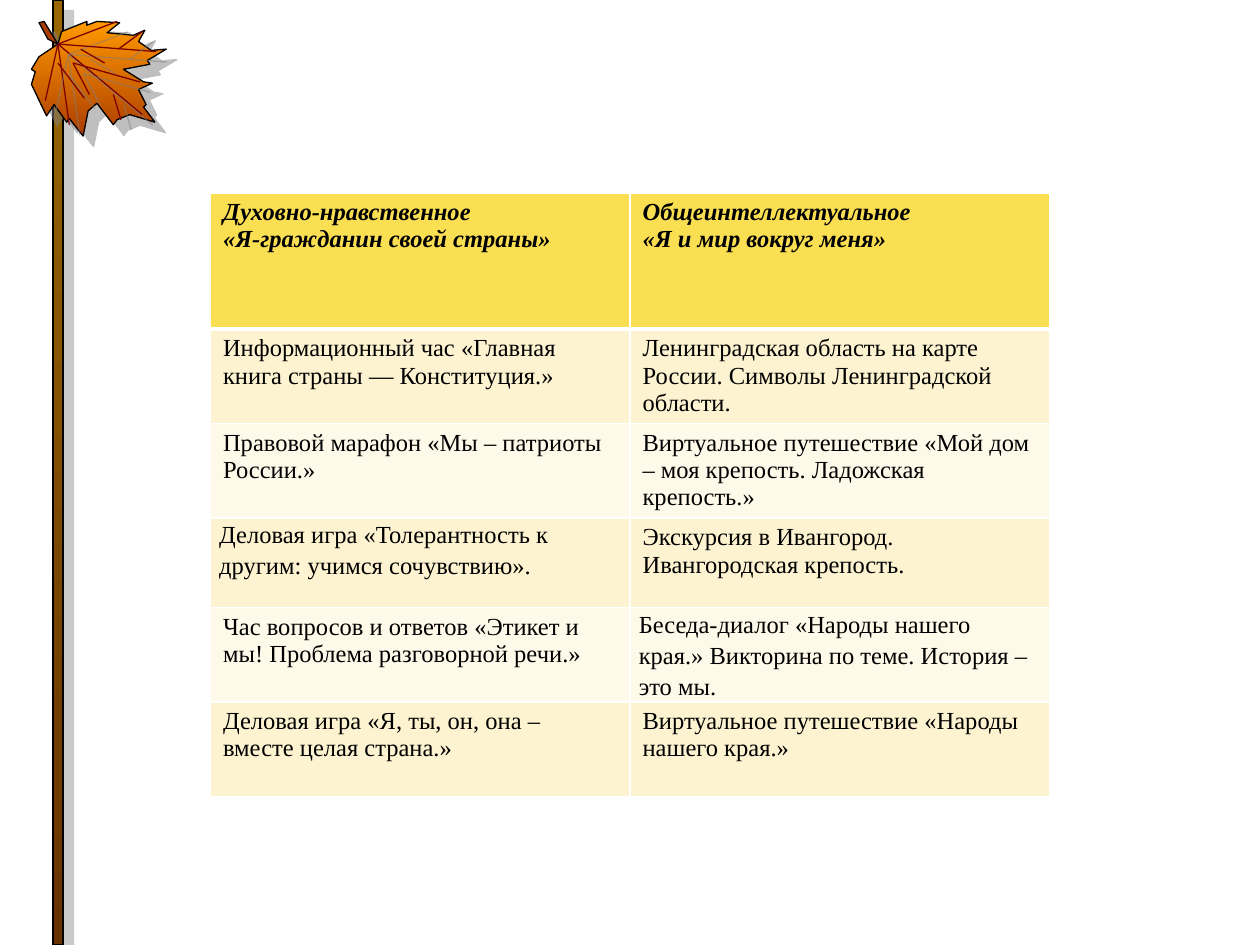
"""Build a slide with a two-column table of activities and an autumn leaf on a pole."""
from lxml import etree
from pptx import Presentation
from pptx.dml.color import RGBColor
from pptx.enum.shapes import MSO_SHAPE
from pptx.oxml.ns import qn
from pptx.util import Inches, Pt

RECT = MSO_SHAPE.RECTANGLE
FONT = "Times New Roman"
HEADER, BAND_DARK, BAND_LIGHT = "FBDF53", "FDF3D1", "FEF9E9"
BLACK, WHITE, VEIN = "000000", "FFFFFF", "7F0000"

ROWS = [
    ("Духовно-нравственное\n«Я-гражданин своей страны»",
     "Общеинтеллектуальное\n«Я и мир вокруг меня»"),
    ("Информационный час «Главная книга страны — Конституция.»",
     "Ленинградская область на карте России. Символы Ленинградской области."),
    ("Правовой марафон «Мы – патриоты России.»",
     "Виртуальное путешествие «Мой дом – моя крепость. Ладожская крепость.»"),
    ("Деловая игра «Толерантность к другим: учимся сочувствию».",
     "Экскурсия в Ивангород. Ивангородская крепость."),
    ("Час вопросов и ответов «Этикет и мы! Проблема разговорной речи.»",
     "Беседа-диалог «Народы нашего края.» Викторина по теме. История – это мы."),
    ("Деловая игра «Я, ты, он, она – вместе целая страна.»",
     "Виртуальное путешествие «Народы нашего края.»"),
]
ROW_HEIGHTS = [1.08, 0.75, 0.75, 0.71, 0.75, 0.75]
LOOSE_CELLS = {(3, 0), (4, 1)}

BASE = (46, 35)
STEM = [BASE, (35, 17), (31, 18), (38, 31)]
LEAF = [
    BASE, (31, 45), (25, 55), (28, 57), (25, 67), (37, 92), (43, 83), (53, 97), (55, 94),
    (66, 108), (70, 88), (77, 82), (90, 99), (93, 95), (103, 91), (123, 97), (114, 85),
    (116, 83), (110, 71), (121, 66), (114, 65), (98, 55), (119, 51), (117, 48), (132, 39),
    (120, 40), (110, 33), (115, 24), (106, 28), (85, 26), (95, 18), (77, 17), (69, 20),
    (69, 17), (49, 25),
]
VEIN_TIPS = [(113, 91), (55, 99), (36, 80), (93, 17), (124, 41)]
SIDE_VEINS = [
    ((58, 50), (111, 65)), ((58, 50), (71, 75)), ((46, 50), (67, 78)),
    ((90, 75), (96, 95)), ((64, 39), (83, 50)), ((94, 39), (113, 25)),
]


def rgb(value):
    return RGBColor.from_string(value)


def add_color(parent, value):
    return etree.SubElement(parent, qn("a:srgbClr"), val=value)


def style(sp, fills, line, width, shadow):
    if len(fills) == 2:
        sp.fill.gradient()
        sp.fill.gradient_angle = 270
        for stop, value in zip(sp.fill.gradient_stops, fills):
            stop.color.rgb = rgb(value)
    elif fills:
        sp.fill.solid()
        sp.fill.fore_color.rgb = rgb(fills[0])
    else:
        sp.fill.background()
    sp.line.color.rgb = rgb(line)
    sp.line.width = Pt(width)
    sp.shadow.inherit = False
    effects = sp._element.spPr.find(qn("a:effectLst"))
    outer = etree.SubElement(effects, qn("a:outerShdw"), dist=str(Pt(8.5)),
                             dir="2700000", algn="ctr", rotWithShape="0")
    etree.SubElement(add_color(outer, shadow), qn("a:alpha"), val="50000")


def add_outline(s, points, fills, line, close):
    builder = s.shapes.build_freeform(*points[0], scale=Inches(0.01))
    builder.add_line_segments(points[1:], close=close)
    style(builder.convert_to_shape(), fills, line, 0, "808080")


def set_borders(cell, widths):
    tc_pr = cell._tc.get_or_add_tcPr()
    for side, width in zip("LRTB", widths):
        ln = etree.SubElement(tc_pr, qn(f"a:ln{side}"), w=str(Pt(width)))
        add_color(etree.SubElement(ln, qn("a:solidFill")), WHITE)


def fill_cell(cell, text, row, loose):
    set_borders(cell, (1, 1, 3 if row == 1 else 1, 3 if row == 0 else 1))
    cell.fill.solid()
    cell.fill.fore_color.rgb = rgb(HEADER if row == 0 else BAND_DARK if row % 2 else BAND_LIGHT)
    if loose:
        cell.margin_left = cell.margin_right = Inches(0.07)
        cell.margin_top = cell.margin_bottom = 0
    tf = cell.text_frame
    tf.text = text
    for p in tf.paragraphs:
        p.font.name, p.font.size = FONT, Pt(14)
        p.font.bold = p.font.italic = row == 0
        p.font.color.rgb = rgb(BLACK)
        if loose:
            p.line_spacing = 1.15


def add_activity_table(s):
    table = s.shapes.add_table(len(ROWS), 2, Inches(1.67), Inches(1.53),
                               Inches(6.66), Inches(sum(ROW_HEIGHTS))).table
    for i, (texts, height) in enumerate(zip(ROWS, ROW_HEIGHTS)):
        table.rows[i].height = Inches(height)
        for j, text in enumerate(texts):
            fill_cell(table.cell(i, j), text, i, (i, j) in LOOSE_CELLS)


def main():
    prs = Presentation()
    prs.slide_width, prs.slide_height = Inches(10), Inches(7.5)
    s = prs.slides.add_slide(prs.slide_layouts[6])
    pole = s.shapes.add_shape(RECT, Inches(0.42), 0, Inches(0.08), Inches(7.5))
    style(pole, ("996600", "663300"), BLACK, 0.75, "969696")
    add_outline(s, STEM, ("AC3D00",), BLACK, True)
    add_outline(s, LEAF, ("FF9900", "AC3D00"), BLACK, True)
    for vein in [(BASE, tip) for tip in VEIN_TIPS] + SIDE_VEINS:
        add_outline(s, vein, (), VEIN, False)
    add_activity_table(s)
    prs.save("out.pptx")


if __name__ == "__main__":
    main()
